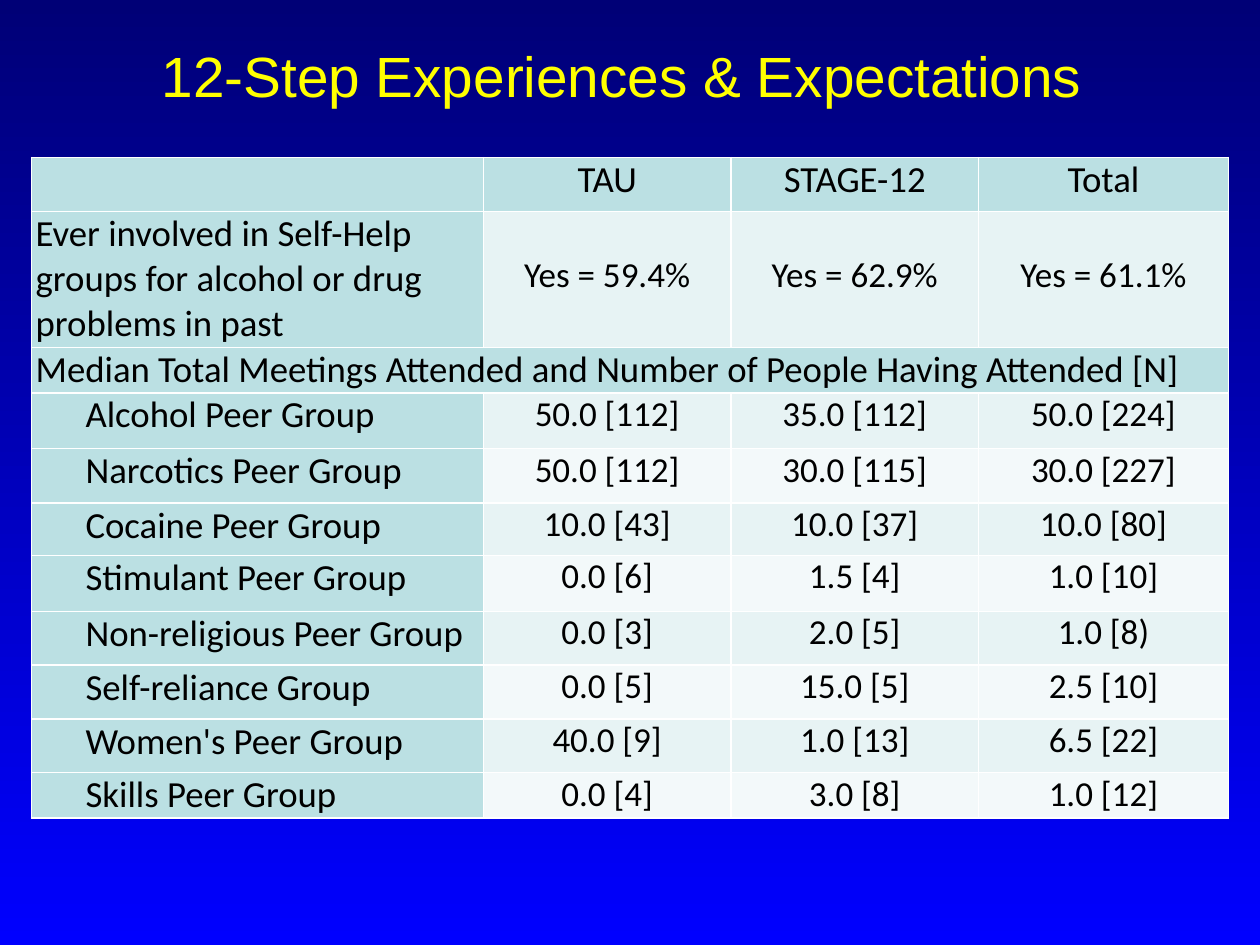
from lxml import etree
from pptx import Presentation
from pptx.dml.color import RGBColor
from pptx.enum.text import MSO_ANCHOR, PP_ALIGN
from pptx.oxml.ns import qn
from pptx.util import Pt

LEFT, CENTER = PP_ALIGN.LEFT, PP_ALIGN.CENTER
MIDDLE = MSO_ANCHOR.MIDDLE

COLORS = {
    "background top": "000076",
    "background bottom": "0000FF",
    "title": "FFFF00",
    "text": "000000",
    "border": "FFFFFF",
    "heading": "BBE0E3",
    "odd band": "E7F3F4",
    "even band": "F3F9FA",
}
COLUMN_WIDTHS = [258.25, 141.5, 141.5, 142.75]
ROW_HEIGHTS = [30.75, 77.75, 26, 32, 31, 30, 32, 30.75, 30.75, 30.75, 26]
LABEL_SIZE, VALUE_SIZE = 21, 20
CELL_INSET = 2.4
GROUP_INDENT = 28.5
INVOLVEMENT_DROP = 24.4  # one line of value text

HEADINGS = ["", "TAU", "STAGE-12", "Total"]
INVOLVEMENT = [
    "Ever involved in Self-Help groups for alcohol or drug problems in past",
    "Yes = 59.4%", "Yes = 62.9%", "Yes = 61.1%",
]
MEETINGS_HEADING = "Median Total Meetings Attended and Number of People Having Attended [N]"
MEETINGS = [
    ["Alcohol Peer Group", "50.0 [112]", "35.0 [112]", "50.0 [224]"],
    ["Narcotics Peer Group", "50.0 [112]", "30.0 [115]", "30.0 [227]"],
    ["Cocaine Peer Group", "10.0 [43]", "10.0 [37]", "10.0 [80]"],
    ["Stimulant Peer Group", "0.0 [6]", "1.5 [4]", "1.0 [10]"],
    ["Non-religious Peer Group", "0.0 [3]", "2.0 [5]", "1.0 [8)"],
    ["Self-reliance Group", "0.0 [5]", "15.0 [5]", "2.5 [10]"],
    ["Women's Peer Group", "40.0 [9]", "1.0 [13]", "6.5 [22]"],
    ["Skills Peer Group", "0.0 [4]", "3.0 [8]", "1.0 [12]"],
]


def rgb(name):
    return RGBColor.from_string(COLORS[name])


def style_paragraph(paragraph, font_name, size, color, align):
    paragraph.alignment = align
    paragraph.font.name = font_name
    paragraph.font.size = Pt(size)
    paragraph.font.color.rgb = rgb(color)


def paint_background(slide):
    fill = slide.background.fill
    fill.gradient()
    fill.gradient_angle = 270
    for stop, name in zip(fill.gradient_stops, ("background top", "background bottom")):
        stop.color.rgb = rgb(name)


def add_title(slide, text):
    title = slide.shapes.title
    title.left, title.top, title.width, title.height = Pt(36), Pt(21.6), Pt(648), Pt(90)
    frame = title.text_frame
    frame.text = text
    frame.vertical_anchor = MIDDLE
    frame.margin_right, frame.margin_bottom = Pt(16.5), Pt(51)
    style_paragraph(frame.paragraphs[0], "Arial", 32.4, "title", CENTER)


def add_borders(cell):
    properties = cell._tc.get_or_add_tcPr()
    for side in ("lnL", "lnR", "lnT", "lnB"):
        line = etree.SubElement(properties, qn(f"a:{side}"), w=str(Pt(1)))
        fill = etree.SubElement(line, qn("a:solidFill"))
        etree.SubElement(fill, qn("a:srgbClr"), val=COLORS["border"])


def fill_cell(cell, text, fill, size=LABEL_SIZE, align=LEFT, indent=0, drop=0):
    """Write and format one cell; indent and drop add to its left and top insets."""
    add_borders(cell)
    cell.fill.solid()
    cell.fill.fore_color.rgb = rgb(fill)
    cell.margin_left, cell.margin_right = Pt(CELL_INSET + indent), Pt(CELL_INSET)
    cell.margin_top, cell.margin_bottom = Pt(drop), Pt(0)
    cell.text = text
    style_paragraph(cell.text_frame.paragraphs[0], "Calibri", size, "text", align)


def fill_data_row(table, row, entries, band, indent=0, drop=0):
    label, *values = entries
    fill_cell(table.cell(row, 0), label, "heading", indent=indent)
    for column, value in enumerate(values, 1):
        fill_cell(table.cell(row, column), value, band, VALUE_SIZE, CENTER, drop=drop)


def add_experience_table(slide):
    table = slide.shapes.add_table(
        len(ROW_HEIGHTS), len(COLUMN_WIDTHS), Pt(18), Pt(90),
        Pt(sum(COLUMN_WIDTHS)), Pt(sum(ROW_HEIGHTS))).table
    for column, width in zip(table.columns, COLUMN_WIDTHS):
        column.width = Pt(width)
    for row, height in zip(table.rows, ROW_HEIGHTS):
        row.height = Pt(height)

    for column, heading in enumerate(HEADINGS):
        fill_cell(table.cell(0, column), heading, "heading", align=CENTER)
    fill_data_row(table, 1, INVOLVEMENT, "odd band", drop=INVOLVEMENT_DROP)
    table.cell(2, 0).merge(table.cell(2, len(HEADINGS) - 1))
    fill_cell(table.cell(2, 0), MEETINGS_HEADING, "heading")
    for row, entries in enumerate(MEETINGS, 3):
        band = "odd band" if row % 2 else "even band"
        fill_data_row(table, row, entries, band, indent=GROUP_INDENT)


def main():
    deck = Presentation()
    deck.slide_width, deck.slide_height = Pt(720), Pt(540)
    slide = deck.slides.add_slide(deck.slide_layouts.get_by_name("Title Only"))
    paint_background(slide)
    add_title(slide, "12-Step Experiences & Expectations")
    add_experience_table(slide)
    deck.save("out.pptx")


if __name__ == "__main__":
    main()
